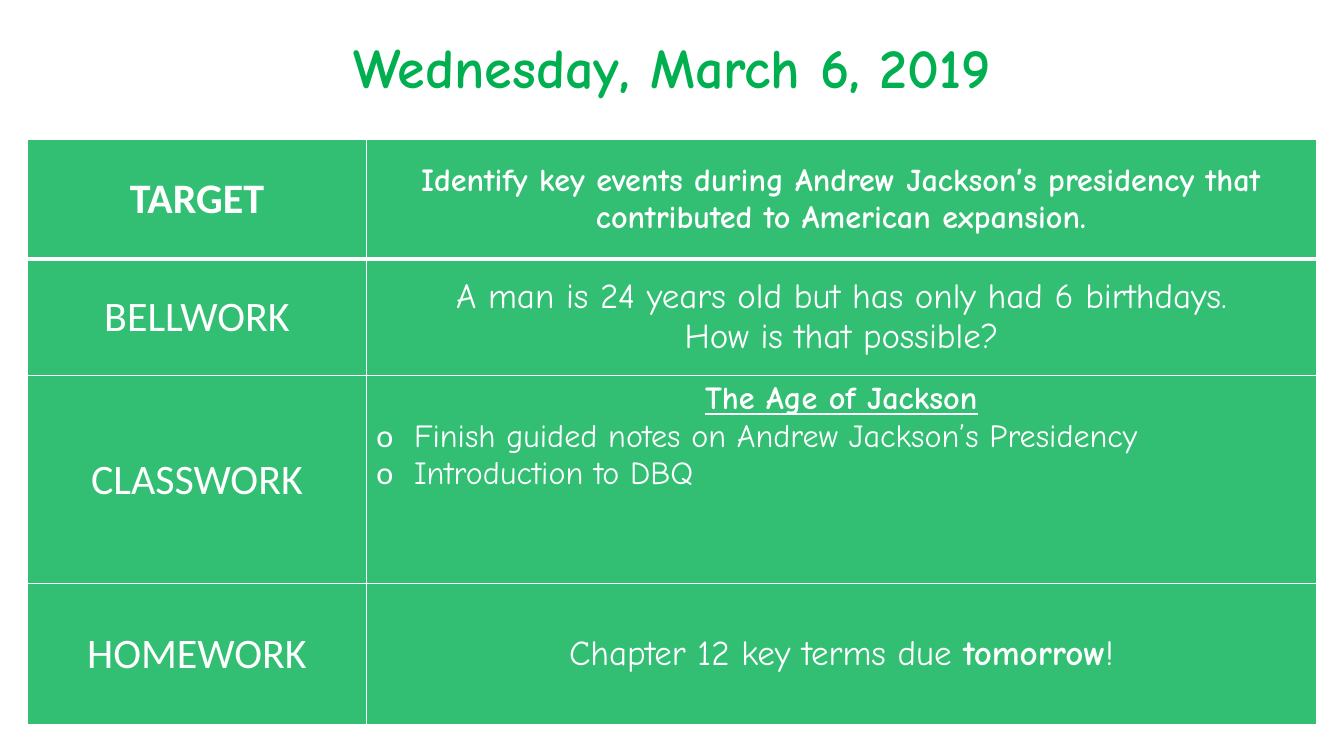
from lxml.etree import SubElement
from pptx import Presentation
from pptx.dml.color import RGBColor
from pptx.enum.shapes import MSO_SHAPE
from pptx.enum.text import MSO_ANCHOR, PP_ALIGN
from pptx.oxml.ns import qn
from pptx.util import Cm, Pt

GREEN = RGBColor(0x00, 0xB0, 0x50)
WHITE = RGBColor(0xFF, 0xFF, 0xFF)
HAND_FONT = "Comic Neue"
LABEL_FONT = "Calibri"
LABEL_WIDTH = 8.53
BULLET_INDENT = Cm(0.95)

# Each row: label, height in cm, text size, paragraphs made of (text, bold) runs
AGENDA = [
    ("TARGET", 3, 23, [[("Identify key events during Andrew Jackson’s presidency "
                         "that contributed to American expansion.", True)]]),
    ("BELLWORK", 2.95, 25, [[("A man is 24 years old but has only had 6 birthdays.", False)],
                            [("How is that possible?", False)]]),
    ("CLASSWORK", 5.24, 23, [[("The Age of Jackson", True)],
                             [("Finish guided notes on Andrew Jackson’s Presidency", False)],
                             [("Introduction to DBQ", False)]]),
    ("HOMEWORK", 3.56, 25, [[("Chapter 12 key terms due ", False), ("tomorrow", True),
                             ("!", False)]]),
]


def fill_translucent(fill, color, percent):
    fill.solid()
    fill.fore_color.rgb = color
    color_element = fill._xPr.find(qn("a:solidFill"))[0]
    SubElement(color_element, qn("a:alpha"), val=str(percent * 1000))


def add_runs(paragraph, runs, font_name, size, color):
    """Add (text, bold) runs to a centred paragraph."""
    paragraph.alignment = PP_ALIGN.CENTER
    for text, bold in runs:
        run = paragraph.add_run()
        run.text = text
        run.font.name = font_name
        run.font.size = Pt(size)
        run.font.bold = bold
        run.font.color.rgb = color


def add_bullet(paragraph):
    paragraph.alignment = PP_ALIGN.LEFT
    properties = paragraph._p.get_or_add_pPr()
    properties.set("marL", str(BULLET_INDENT))
    properties.set("indent", str(-BULLET_INDENT))
    SubElement(properties, qn("a:buFont"), typeface=LABEL_FONT)
    SubElement(properties, qn("a:buChar"), char="o")


def set_borders(cell, top, bottom):
    """Draw white borders; top and bottom are widths in points."""
    properties = cell._tc.get_or_add_tcPr()
    for side, width in (("L", 1), ("R", 1), ("T", top), ("B", bottom)):
        line = SubElement(properties, qn(f"a:ln{side}"), w=str(Pt(width)))
        solid = SubElement(line, qn("a:solidFill"))
        SubElement(solid, qn("a:srgbClr"), val=str(WHITE))


def fill_cell(cell, paragraphs, font_name, size):
    cell.vertical_anchor = MSO_ANCHOR.MIDDLE
    fill_translucent(cell.fill, GREEN, 80)
    text_frame = cell.text_frame
    for index, runs in enumerate(paragraphs):
        paragraph = text_frame.add_paragraph() if index else text_frame.paragraphs[0]
        add_runs(paragraph, runs, font_name, size, WHITE)


def add_date_banner(slide, left, top, width, height):
    banner = slide.shapes.add_shape(MSO_SHAPE.RECTANGLE, Cm(left), Cm(top), Cm(width), Cm(height))
    banner.shadow.inherit = False
    banner.line.fill.background()
    fill_translucent(banner.fill, WHITE, 65)
    banner.text_frame.word_wrap = True
    banner.text_frame.vertical_anchor = MSO_ANCHOR.MIDDLE
    add_runs(banner.text_frame.paragraphs[0], [("Wednesday, March 6, 2019", True)],
             HAND_FONT, 40, GREEN)


def add_agenda(slide, left, top, width):
    height = sum(row[1] for row in AGENDA)
    table = slide.shapes.add_table(len(AGENDA), 2, Cm(left), Cm(top), Cm(width), Cm(height)).table
    table.horz_banding = False
    table.columns[0].width = Cm(LABEL_WIDTH)
    table.columns[1].width = Cm(width - LABEL_WIDTH)
    for index, (label, row_height, size, paragraphs) in enumerate(AGENDA):
        table.rows[index].height = Cm(row_height)
        label_cell, content_cell = table.rows[index].cells
        for cell in (label_cell, content_cell):
            set_borders(cell, top=3 if index == 1 else 1, bottom=3 if index == 0 else 1)
        fill_cell(label_cell, [[(label, index == 0)]], LABEL_FONT, 30)
        fill_cell(content_cell, paragraphs, HAND_FONT, size)
        if label == "CLASSWORK":
            content_cell.vertical_anchor = MSO_ANCHOR.TOP
            heading, *tasks = content_cell.text_frame.paragraphs
            heading.runs[0].font.underline = True
            for task in tasks:
                add_bullet(task)


def main():
    presentation = Presentation()
    presentation.slide_width = Cm(33.87)
    presentation.slide_height = Cm(19.05)
    slide = presentation.slides.add_slide(presentation.slide_layouts[6])
    left, width = 0.7, 32.48
    add_agenda(slide, left, 3.52, width)
    add_date_banner(slide, left, 0.4, width, 2.54)
    presentation.save("out.pptx")


if __name__ == "__main__":
    main()
